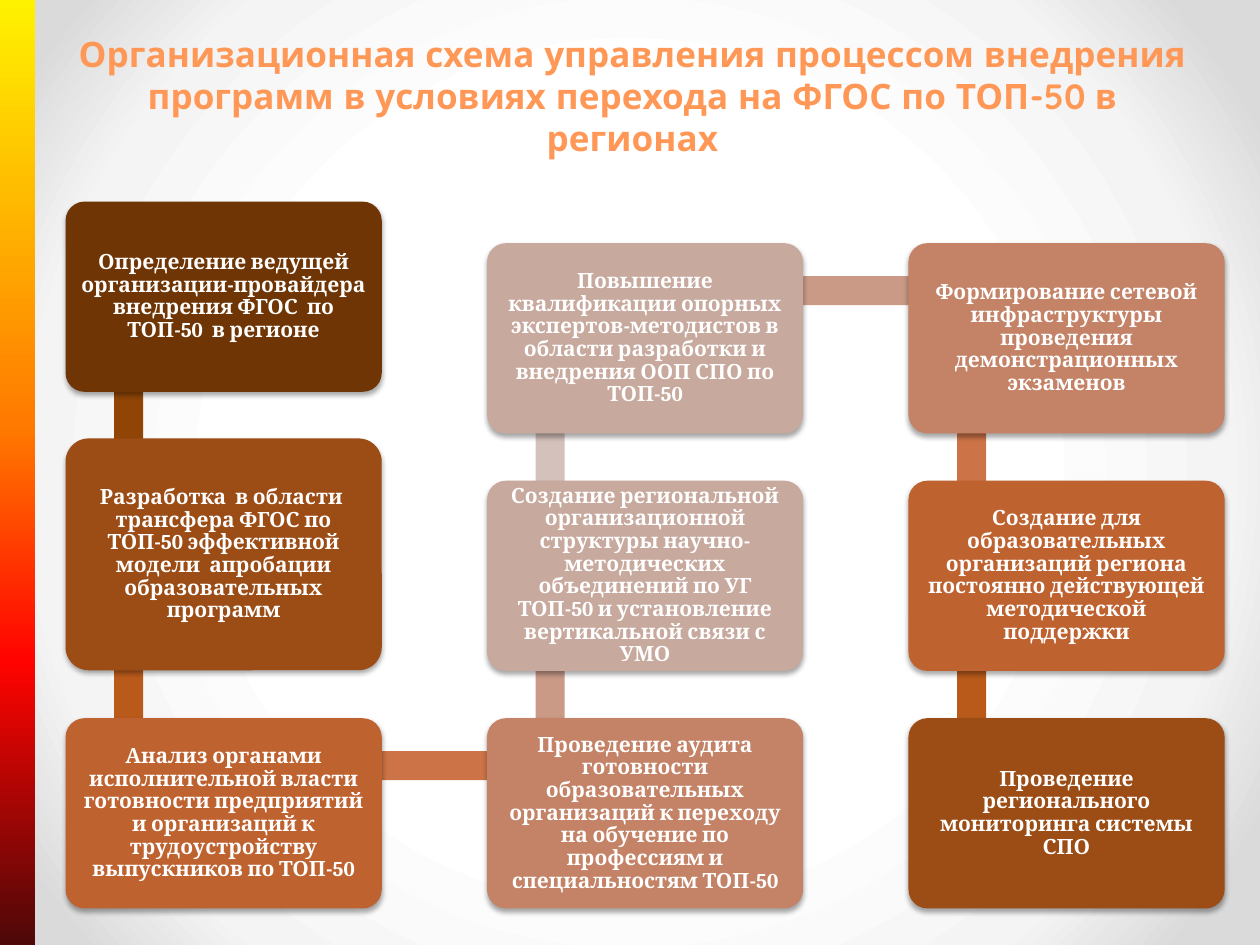
from itertools import pairwise

from lxml import etree
from pptx import Presentation
from pptx.dml.color import RGBColor
from pptx.enum.shapes import MSO_SHAPE as SHAPE
from pptx.enum.text import MSO_ANCHOR as ANCHOR, PP_ALIGN as ALIGN
from pptx.oxml import parse_xml
from pptx.oxml.ns import nsdecls
from pptx.util import Inches, Pt

WHITE = RGBColor(0xFF, 0xFF, 0xFF)
PEACH = RGBColor(0xFF, 0x98, 0x56)
COCOA = RGBColor(0x70, 0x35, 0x04)
BROWN = RGBColor(0x9C, 0x4C, 0x15)
RUST = RGBColor(0xBE, 0x62, 0x2F)
CLAY = RGBColor(0xC4, 0x83, 0x67)
ROSE = RGBColor(0xC8, 0xA9, 0x9E)
LINK_COCOA = RGBColor(0x90, 0x45, 0x06)
LINK_RUST = RGBColor(0xB9, 0x5A, 0x1B)
LINK_ORANGE = RGBColor(0xCC, 0x74, 0x47)
LINK_CLAY = RGBColor(0xCA, 0x9A, 0x87)
LINK_ROSE = RGBColor(0xD4, 0xC1, 0xBC)

BACKDROP = [(50, "FFFFFF"), (76, "F4F4F4"), (92, "DADADA")]
FLAME = [(0, "FFF200"), (45, "FF7A00"), (70, "FF0300"), (100, "4D0808")]
DOWNWARD = '<a:lin ang="5400000" scaled="0"/>'
FROM_CENTRE = ('<a:path path="circle">'
               '<a:fillToRect l="50000" t="50000" r="50000" b="50000"/></a:path>')

BOX_W, BOX_H, TALL_H = 2.51, 1.51, 1.84
COLS = [0.52 + 3.345 * i for i in range(3)]
TOP, MIDDLE, BOTTOM = (1.93 + 1.885 * i for i in range(3))
BAR = 0.23

# column, top, height, fill, colour of the link to the next step, text
STEPS = [
    (0, 1.6, BOX_H, COCOA, LINK_COCOA,
     "Определение ведущей организации-провайдера внедрения ФГОС  по ТОП-50  в регионе"),
    (0, 3.48, TALL_H, BROWN, LINK_RUST,
     "Разработка  в области  трансфера ФГОС по ТОП-50 эффективной модели  апробации "
     "образовательных программ"),
    (0, BOTTOM, BOX_H, RUST, LINK_ORANGE,
     "Анализ органами исполнительной власти готовности предприятий и организаций "
     "к трудоустройству выпускников по ТОП-50"),
    (1, BOTTOM, BOX_H, CLAY, LINK_CLAY,
     "Проведение аудита готовности образовательных организаций к переходу на обучение "
     "по профессиям и специальностям ТОП-50"),
    (1, MIDDLE, BOX_H, ROSE, LINK_ROSE,
     "Создание региональной организационной структуры научно-методических объединений "
     "по УГ ТОП-50 и установление вертикальной связи с УМО"),
    (1, TOP, BOX_H, ROSE, LINK_CLAY,
     "Повышение квалификации опорных экспертов-методистов в области разработки "
     "и внедрения ООП СПО по ТОП-50"),
    (2, TOP, BOX_H, CLAY, LINK_ORANGE,
     "Формирование сетевой инфраструктуры проведения демонстрационных экзаменов"),
    (2, MIDDLE, BOX_H, RUST, LINK_RUST,
     "Создание для образовательных организаций региона постоянно действующей "
     "методической поддержки"),
    (2, BOTTOM, BOX_H, BROWN, None,
     "Проведение регионального мониторинга системы СПО"),
]


def set_gradient(fill, element, stops, direction):
    """Replace the first gradient under element by the given stops."""
    fill.gradient()
    old = element.xpath(".//a:gradFill")[0]
    marks = "".join(f'<a:gs pos="{pos * 1000}"><a:srgbClr val="{colour}"/></a:gs>'
                    for pos, colour in stops)
    new = parse_xml(f'<a:gradFill {nsdecls("a")} rotWithShape="1">'
                    f'<a:gsLst>{marks}</a:gsLst>{direction}</a:gradFill>')
    old.getparent().replace(old, new)


def add_shadow(shape):
    shadow = etree.fromstring(
        f'<a:outerShdw {nsdecls("a")} blurRad="40000" dist="23000" dir="5400000" '
        'rotWithShape="0"><a:srgbClr val="000000"><a:alpha val="35000"/></a:srgbClr>'
        '</a:outerShdw>')
    shape.element.spPr.xpath("a:effectLst")[0].append(shadow)


class Deck:
    def __init__(self):
        self.prs = Presentation()
        self.prs.slide_width, self.prs.slide_height = Inches(10), Inches(7.5)
        self.s = self.prs.slides.add_slide(self.prs.slide_layouts[6])
        set_gradient(self.s.background.fill, self.s.element, BACKDROP, FROM_CENTRE)

    def shape(self, kind, x, y, w, h, fill=None):
        sp = self.s.shapes.add_shape(kind, Inches(x), Inches(y), Inches(w), Inches(h))
        sp.shadow.inherit = False
        sp.line.fill.background()
        if fill is not None:
            sp.fill.solid()
            sp.fill.fore_color.rgb = fill
        return sp

    def label(self, tf, text, font, size, colour):
        tf.word_wrap = True
        p = tf.paragraphs[0]
        p.text = text
        p.alignment = ALIGN.CENTER
        p.font.name, p.font.size, p.font.bold = font, Pt(size), True
        p.font.color.rgb = colour
        return p

    def title(self, text):
        sp = self.s.shapes.add_textbox(Inches(0.52), Inches(0.21), Inches(9), Inches(1.26))
        p = self.label(sp.text_frame, text, "Quicksand", 20, PEACH)
        p.space_before = Pt(4)

    def stripe(self):
        sp = self.shape(SHAPE.RECTANGLE, 0, 0, 0.28, 7.5)
        set_gradient(sp.fill, sp.element, FLAME, DOWNWARD)

    def link(self, start, end, colour):
        """Draw a bar between two points on one row or column."""
        (x1, x2), (y1, y2) = (sorted(pair) for pair in zip(start, end))
        if x1 == x2:
            self.shape(SHAPE.RECTANGLE, x1 - BAR / 2, y1, BAR, y2 - y1, colour)
        else:
            self.shape(SHAPE.RECTANGLE, x1, y1 - BAR / 2, x2 - x1, BAR, colour)

    def box(self, x, y, h, fill, text):
        sp = self.shape(SHAPE.ROUNDED_RECTANGLE, x, y, BOX_W, h, fill)
        sp.adjustments[0] = 0.1
        add_shadow(sp)
        tf = sp.text_frame
        tf.vertical_anchor = ANCHOR.MIDDLE
        tf.margin_left = tf.margin_right = Inches(0.07)
        tf.margin_top = tf.margin_bottom = Inches(0.07)
        p = self.label(tf, text, "Cambria", 12, WHITE)
        p.line_spacing = 0.9


def main():
    deck = Deck()
    deck.title("Организационная схема управления процессом внедрения программ "
               "в условиях перехода на ФГОС по ТОП-50 в регионах")
    deck.stripe()
    joints = [(COLS[col] + BOX_W * 0.2, top + h * 0.25) for col, top, h, *_ in STEPS]
    for (start, end), step in zip(pairwise(joints), STEPS):
        deck.link(start, end, step[4])
    for col, top, h, fill, _, text in STEPS:
        deck.box(COLS[col], top, h, fill, text)
    deck.prs.save("out.pptx")


if __name__ == "__main__":
    main()
